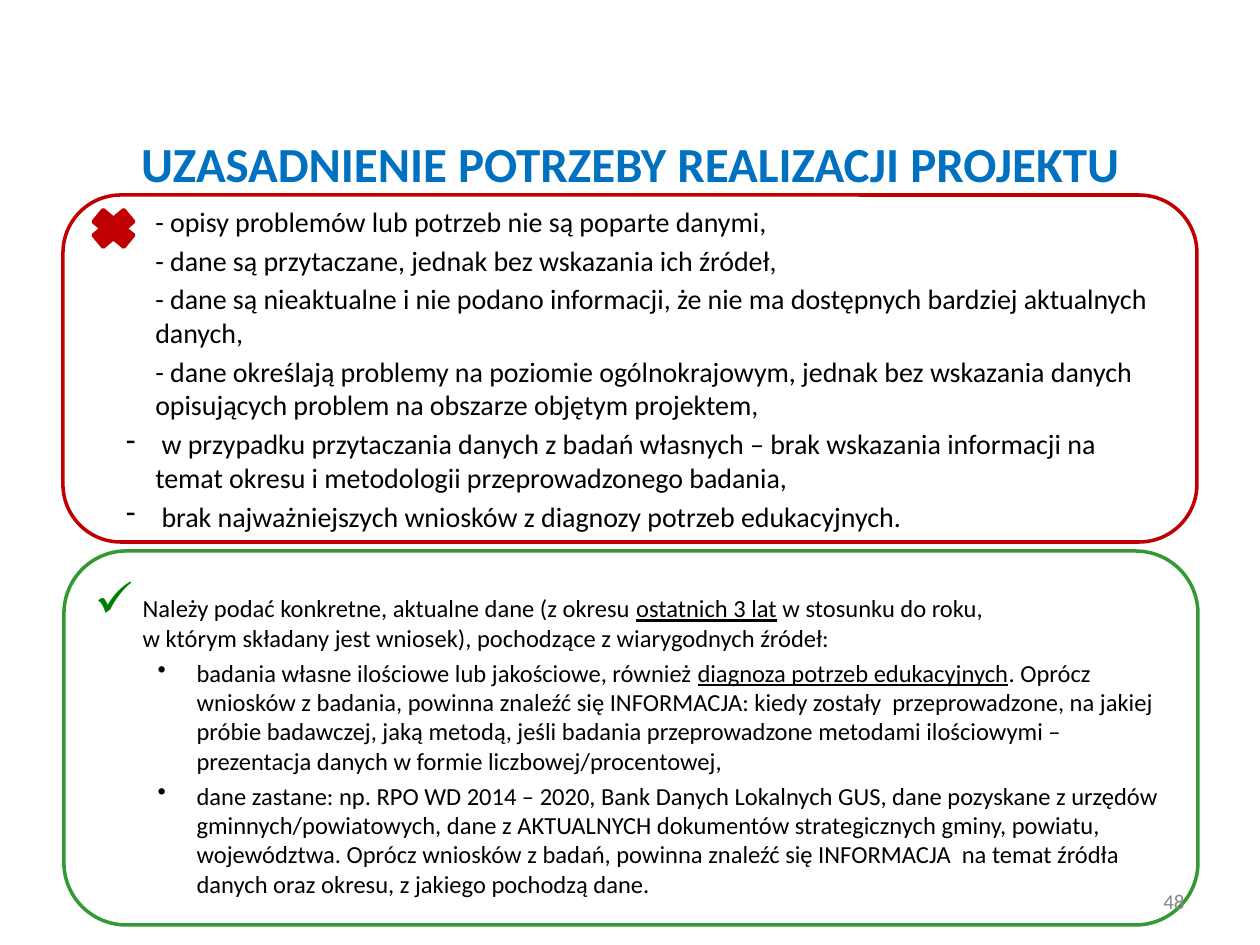
from lxml import etree
from pptx import Presentation
from pptx.dml.color import RGBColor
from pptx.enum.shapes import MSO_SHAPE
from pptx.enum.text import MSO_ANCHOR, PP_ALIGN
from pptx.oxml.ns import qn
from pptx.util import Pt

PX = 914400 // 126
FONT = "Calibri"
COLORS = {"title": "0070C0", "wrong": "C00000", "right": "339933",
          "check": "008000", "text": "000000", "number": "898989"}
ROUNDED, CROSS = MSO_SHAPE.ROUNDED_RECTANGLE, MSO_SHAPE.MATH_MULTIPLY
MIDDLE = MSO_ANCHOR.MIDDLE
LEFT, CENTER, RIGHT = PP_ALIGN.LEFT, PP_ALIGN.CENTER, PP_ALIGN.RIGHT


def add_outlined(kind, box, color):
    shape = slide.shapes.add_shape(kind, *(v * PX for v in box))
    shape.shadow.inherit = False
    shape.fill.background()
    shape.line.color.rgb = RGBColor.from_string(COLORS[color])
    shape.line.width = Pt(2)
    shape.text_frame.word_wrap = True
    shape.text_frame.vertical_anchor = MIDDLE
    return shape


def write(frame, items, size, color="text", align=LEFT, bold=False):
    """Each item: text pieces (every second one underlined), left px, indent px, bullet."""
    for i, (pieces, left, indent, bullet) in enumerate(items):
        paragraph = frame.paragraphs[0] if i == 0 else frame.add_paragraph()
        paragraph.text = "".join(pieces) if len(pieces) == 1 else ""
        if len(pieces) > 1:
            for n, piece in enumerate(pieces):
                for part, line in enumerate(piece.split("\n")):
                    if part:
                        paragraph.add_line_break()
                    run = paragraph.add_run()
                    run.text = line
                    run.font.underline = n % 2 == 1
        properties = paragraph._p.get_or_add_pPr()
        properties.set("marL", str(left * PX))
        properties.set("indent", str(indent * PX))
        if bullet == "✓":
            tint = etree.SubElement(properties, qn("a:buClr"))
            etree.SubElement(tint, qn("a:srgbClr"), val=COLORS["check"])
            etree.SubElement(properties, qn("a:buSzPct"), val="200000")
        if bullet:
            etree.SubElement(properties, qn("a:buChar"), char=bullet)
        paragraph.alignment = align
        paragraph.space_before = Pt(3 if i else 0)
        for run in paragraph.runs:
            run.font.name = FONT
            run.font.size = Pt(size)
            run.font.bold = bold
            run.font.color.rgb = RGBColor.from_string(COLORS[color])


presentation = Presentation()
presentation.slide_width, presentation.slide_height = 1260 * PX, 945 * PX
slide = presentation.slides.add_slide(presentation.slide_layouts[5])

# Title
title = slide.shapes.title
title.left, title.top, title.width, title.height = (v * PX for v in (49, 138, 1162, 50))
title.text_frame.vertical_anchor = MIDDLE
write(title.text_frame, [(["UZASADNIENIE POTRZEBY REALIZACJI PROJEKTU"], 0, 0, None)],
      28, "title", CENTER, True)

# Good practice
advice = add_outlined(ROUNDED, (64, 551, 1134, 374), "right")
advice.text_frame.margin_top = 22 * PX
write(advice.text_frame, [
    (["Należy podać konkretne, aktualne dane (z okresu ", "ostatnich 3 lat",
      " w stosunku do roku, \nw którym składany jest wniosek), pochodzące z wiarygodnych źródeł:"],
     48, -48, "✓"),
    (["badania własne ilościowe lub jakościowe, również ", "diagnoza potrzeb edukacyjnych",
      ". Oprócz wniosków z badania, powinna znaleźć się INFORMACJA: kiedy zostały  "
      "przeprowadzone, na jakiej próbie badawczej, jaką metodą, jeśli badania przeprowadzone "
      "metodami ilościowymi – prezentacja danych w formie liczbowej/procentowej,"],
     102, -39, "•"),
    (["dane zastane: np. RPO WD 2014 – 2020, Bank Danych Lokalnych GUS, dane pozyskane "
      "z urzędów gminnych/powiatowych, dane z AKTUALNYCH dokumentów strategicznych gminy, "
      "powiatu, województwa. Oprócz wniosków z badań, powinna znaleźć się INFORMACJA  "
      "na temat źródła danych oraz okresu, z jakiego pochodzą dane."],
     102, -39, "•"),
], 14)

# Slide number
number = slide.shapes.add_textbox(*(v * PX for v in (903, 876, 294, 50)))
number.text_frame.word_wrap = True
number.text_frame.vertical_anchor = MIDDLE
write(number.text_frame, [(["48"], 0, 0, None)], 12, "number", RIGHT)

# Common mistakes
mistakes = add_outlined(ROUNDED, (63, 195, 1134, 347), "wrong")
plain = [
    "- opisy problemów lub potrzeb nie są poparte danymi,",
    "- dane są przytaczane, jednak bez wskazania ich źródeł,",
    "- dane są nieaktualne i nie podano informacji, że nie ma dostępnych bardziej "
    "aktualnych danych,",
    "- dane określają problemy na poziomie ogólnokrajowym, jednak bez wskazania danych "
    "opisujących problem na obszarze objętym projektem,",
]
dashed = [
    " w przypadku przytaczania danych z badań własnych – brak wskazania informacji na "
    "temat okresu i metodologii przeprowadzonego badania,",
    " brak najważniejszych wniosków z diagnozy potrzeb edukacyjnych.",
]
write(mistakes.text_frame,
      [([text], 63, 0, None) for text in plain]
      + [([text], 63, -29, "-") for text in dashed], 16)

# Cross mark
cross = add_outlined(CROSS, (84, 204, 59, 49), "wrong")
cross.adjustments[0] = 0.32
cross.fill.solid()
cross.fill.fore_color.rgb = RGBColor.from_string(COLORS["wrong"])

presentation.save("out.pptx")
